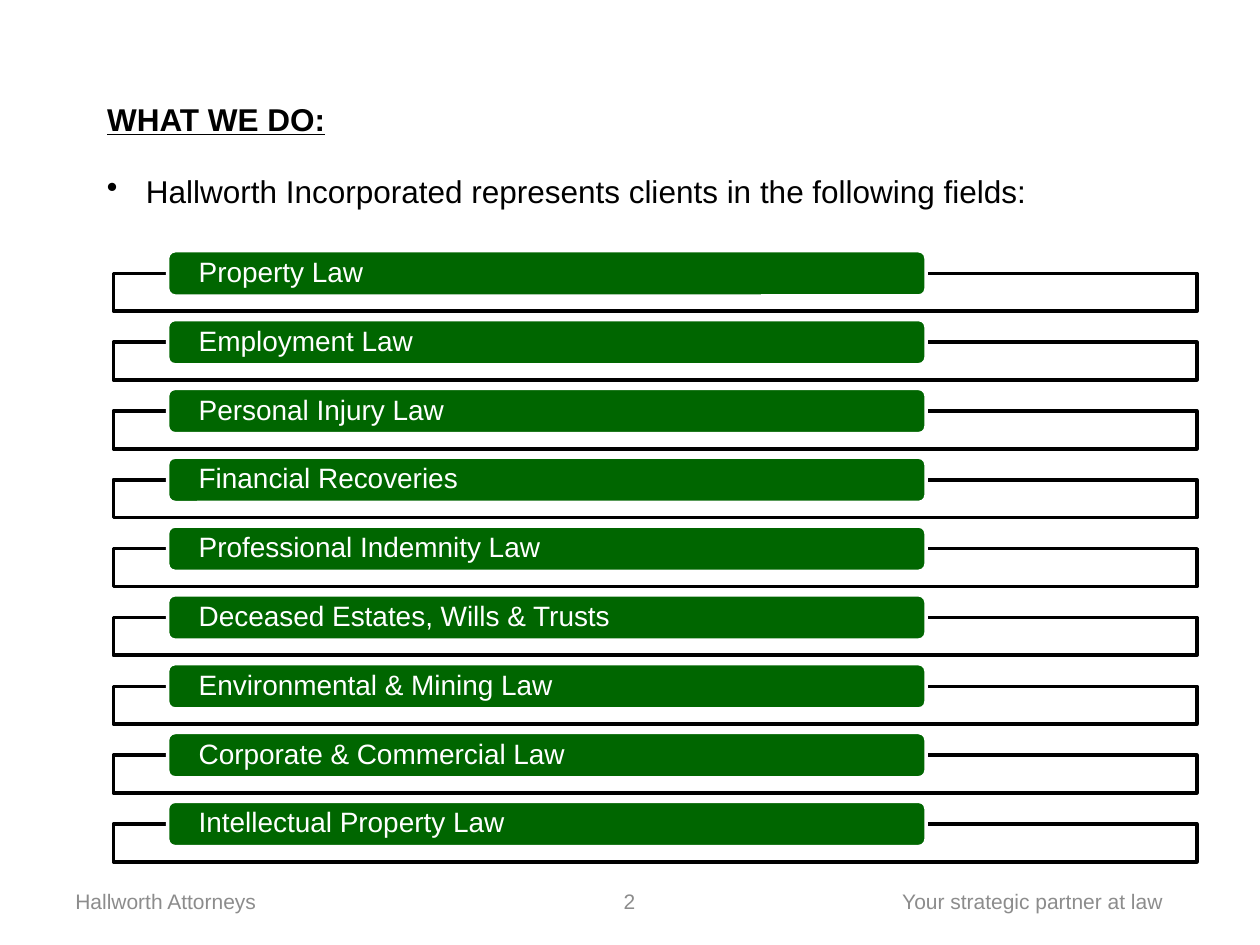
"""Build a slide that lists the legal fields of a law firm."""
from dataclasses import dataclass
from typing import Any

import lxml.etree
import pptx
import pptx.dml.color
import pptx.enum.shapes
import pptx.enum.text
import pptx.oxml.ns
import pptx.util

RGB = pptx.dml.color.RGBColor
ALIGN = pptx.enum.text.PP_ALIGN
KIND = pptx.enum.shapes.MSO_SHAPE
MID = pptx.enum.text.MSO_ANCHOR.MIDDLE
TOP = pptx.enum.text.MSO_ANCHOR.TOP

BLACK = RGB(0x00, 0x00, 0x00)
WHITE = RGB(0xFF, 0xFF, 0xFF)
GREEN = RGB(0x00, 0x66, 0x00)
GREY = RGB(0x8C, 0x8C, 0x8C)

COLS, ROWS = 1000, 750
WIDE, HIGH = pptx.util.Inches(10), pptx.util.Inches(7.5)
FIRST, LAST = 199, 636
FIELDS = [
    "Property Law",
    "Employment Law",
    "Personal Injury Law",
    "Financial Recoveries",
    "Professional Indemnity Law",
    "Deceased Estates, Wills & Trusts",
    "Environmental & Mining Law",
    "Corporate & Commercial Law",
    "Intellectual Property Law",
]


@dataclass(frozen=True)
class Box:
    """Hold a place in grid columns and rows."""
    col: float
    row: float
    cols: float
    rows: float

    def place(self) -> tuple[int, int, int, int]:
        """Return left, top, width and height on the slide."""
        return (across(self.col), down(self.row),
                across(self.cols), down(self.rows))


@dataclass(frozen=True)
class Note:
    """Hold one line of the footer."""
    text: str
    box: Box
    align: Any


NOTES = [
    Note("Hallworth Attorneys", Box(50, 695, 233, 40), ALIGN.LEFT),
    Note("2", Box(383, 695, 233, 40), ALIGN.CENTER),
    Note("Your strategic partner at law", Box(689, 695, 261, 40), ALIGN.CENTER),
]


def across(cols: float) -> int:
    """Turn grid columns into a length."""
    return round(WIDE * cols / COLS)


def down(rows: float) -> int:
    """Turn grid rows into a length."""
    return round(HIGH * rows / ROWS)


def write(shape: Any, text: str, size: int, color: RGB,
          align: Any = ALIGN.LEFT, anchor: Any = MID) -> Any:
    """Put one styled paragraph in a shape and return it."""
    frame = shape.text_frame
    frame.word_wrap = True
    frame.vertical_anchor = anchor
    frame.text = text
    para = frame.paragraphs[0]
    para.alignment = align
    para.font.name = "Arial"
    para.font.size = pptx.util.Pt(size)
    para.font.color.rgb = color
    return para


def block(slide: Any, kind: Any, box: Box, fill: RGB, line: RGB) -> Any:
    """Draw a filled and outlined shape."""
    shape = slide.shapes.add_shape(kind, *box.place())
    shape.shadow.inherit = False
    shape.fill.solid()
    shape.fill.fore_color.rgb = fill
    shape.line.color.rgb = line
    shape.line.width = pptx.util.Pt(2)
    return shape


def field(slide: Any, text: str, row: float) -> None:
    """Draw a legal field as a green bar on a framed row."""
    block(slide, KIND.RECTANGLE, Box(90, row + 18, 860, 30), WHITE, BLACK)
    bar = block(slide, KIND.ROUNDED_RECTANGLE,
                Box(133, row, 602, 36), GREEN, WHITE)
    frame = bar.text_frame
    frame.margin_left = frame.margin_right = across(23)
    frame.margin_top = frame.margin_bottom = 0
    write(bar, text, 16, WHITE).line_spacing = 0.9


def bullet(para: Any, indent: int) -> None:
    """Give a paragraph a round bullet with a hanging indent."""
    props = para._p.get_or_add_pPr()
    props.set("marL", str(indent))
    props.set("indent", str(-indent))
    mark = lxml.etree.SubElement(props, pptx.oxml.ns.qn("a:buChar"))
    mark.set("char", "•")


def main() -> None:
    """Build and save the slide."""
    deck = pptx.Presentation()
    deck.slide_width, deck.slide_height = WIDE, HIGH
    slide = deck.slides.add_slide(deck.slide_layouts[5])

    title = slide.shapes.title
    title.left, title.top, title.width, title.height = Box(75, 74, 850, 40).place()
    head = write(title, "WHAT WE DO:", 18, BLACK, anchor=TOP)
    head.font.bold = head.font.underline = True

    intro = slide.shapes.add_textbox(*Box(75, 132, 850, 46).place())
    para = write(
        intro,
        "Hallworth Incorporated represents clients in the following fields:",
        18, BLACK, anchor=TOP)
    bullet(para, across(31))

    pitch = (LAST - FIRST) / (len(FIELDS) - 1)
    for rank, name in enumerate(FIELDS):
        field(slide, name, FIRST + rank * pitch)

    for note in NOTES:
        area = slide.shapes.add_textbox(*note.box.place())
        write(area, note.text, 12, GREY, note.align)

    deck.save("out.pptx")


if __name__ == "__main__":
    main()
